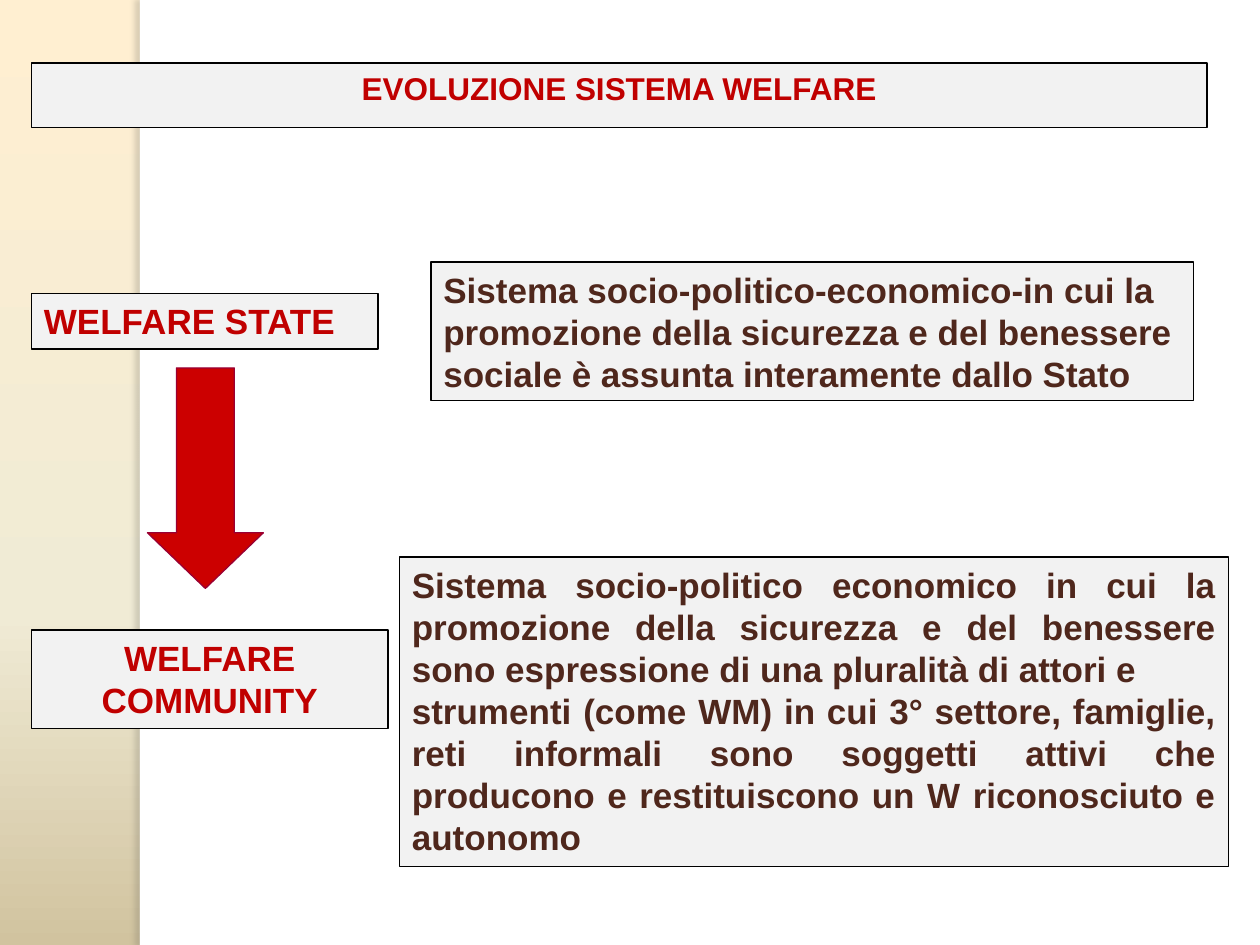
from copy import deepcopy
from dataclasses import dataclass

from lxml.etree import SubElement
from pptx import Presentation
from pptx.dml.color import RGBColor
from pptx.enum.shapes import MSO_SHAPE
from pptx.enum.text import MSO_ANCHOR, MSO_AUTO_SIZE, PP_ALIGN
from pptx.oxml.ns import qn
from pptx.util import Inches, Pt


@dataclass(frozen=True)
class Theme:
    font: str = "Arial"
    title_size: int = 18
    body_size: int = 20
    heading: str = "C00000"
    body: str = "4F271C"
    box: str = "F2F2F2"
    outline: str = "000000"
    arrow: str = "CC0000"
    arrow_outline: str = "990033"
    panel: str = "FFFFFF"
    shade: str = "736F63"
    background: tuple = ((0, "FFEFD1"), (0.65, "F0EBD5"), (1, "D1C39F"))


THEME = Theme()
WIDTH, HEIGHT = 10, 7.5
PANEL_LEFT, EDGE_WIDTH = 1.11, 0.08
LEFT = 0.25

TITLE = "EVOLUZIONE SISTEMA WELFARE"
TITLE_PLACE = (LEFT, 0.5, 9.33, 0.51)
ARROW_PLACE = (1.17, 2.92, 0.92, 1.75)

# place, paragraphs, alignment, colour, wraps
BOXES = [
    ((LEFT, 2.33, 2.75, 0.44), ["WELFARE STATE"],
     PP_ALIGN.LEFT, THEME.heading, True),
    ((LEFT, 5, 2.83, 0.78), ["WELFARE COMMUNITY"],
     PP_ALIGN.CENTER, THEME.heading, True),
    ((3.42, 2.08, 6.05, 1.1),
     ["Sistema socio-politico-economico-in cui la",
      "promozione della sicurezza e del benessere",
      "sociale è assunta interamente dallo Stato"],
     PP_ALIGN.JUSTIFY, THEME.body, False),
    ((3.17, 4.42, 6.58, 2.46),
     ["Sistema socio-politico economico in cui la promozione della sicurezza "
      "e del benessere sono espressione di una pluralità di attori e",
      "strumenti (come WM) in cui 3° settore, famiglie, reti informali sono "
      "soggetti attivi che producono e restituiscono un W riconosciuto e "
      "autonomo"],
     PP_ALIGN.JUSTIFY, THEME.body, True),
]


def rgb(value):
    return RGBColor.from_string(value)


def paint(shape, fill, line=None):
    shape.fill.solid()
    shape.fill.fore_color.rgb = rgb(fill)
    if line:
        shape.line.color.rgb = rgb(line)
        shape.line.width = Pt(0.75)
    else:
        shape.line.fill.background()


def add_shape(slide, kind, place, fill, line=None):
    shape = slide.shapes.add_shape(kind, *map(Inches, place))
    shape.shadow.inherit = False
    paint(shape, fill, line)
    return shape


def write(shape, paragraphs, align, color, size, wraps=True):
    frame = shape.text_frame
    frame.word_wrap = wraps
    frame.auto_size = MSO_AUTO_SIZE.NONE
    frame.vertical_anchor = MSO_ANCHOR.TOP
    for index, text in enumerate(paragraphs):
        para = frame.add_paragraph() if index else frame.paragraphs[0]
        para.alignment = align
        span = para.add_run()
        span.text = text
        span.font.name = THEME.font
        span.font.size = Pt(size)
        span.font.bold = True
        span.font.color.rgb = rgb(color)


def set_background(slide):
    fill = slide.background.fill
    fill.gradient()
    fill.gradient_angle = 270
    stops = slide.element.find(".//" + qn("a:gsLst"))
    stops.append(deepcopy(stops[-1]))
    for stop, (position, color) in zip(fill.gradient_stops, THEME.background):
        stop.position = position
        stop.color.rgb = rgb(color)


def cast_shadow_left(shape):
    effects = shape.element.spPr.find(qn("a:effectLst"))
    shadow = SubElement(effects, qn("a:outerShdw"), blurRad=str(Pt(3)),
                        dist=str(Pt(3)), dir="10800000", rotWithShape="0")
    color = SubElement(shadow, qn("a:srgbClr"), val=THEME.shade)
    SubElement(color, qn("a:alpha"), val="25000")


def add_panel(slide):
    for width in (WIDTH - PANEL_LEFT, EDGE_WIDTH):
        strip = add_shape(slide, MSO_SHAPE.RECTANGLE,
                          (PANEL_LEFT, 0, width, HEIGHT), THEME.panel)
    cast_shadow_left(strip)


def place_title(slide):
    title = slide.shapes.title
    title.left, title.top, title.width, title.height = map(Inches, TITLE_PLACE)
    paint(title, THEME.box, THEME.outline)
    write(title, [TITLE], PP_ALIGN.CENTER, THEME.heading, THEME.title_size)
    title.element.getparent().append(title.element)  # in front of the panel


def main():
    deck = Presentation()
    deck.slide_width, deck.slide_height = Inches(WIDTH), Inches(HEIGHT)
    slide = deck.slides.add_slide(deck.slide_layouts[5])
    set_background(slide)
    add_panel(slide)
    place_title(slide)

    arrow = add_shape(slide, MSO_SHAPE.DOWN_ARROW, ARROW_PLACE,
                      THEME.arrow, THEME.arrow_outline)
    arrow.adjustments[0] = 0.5
    arrow.adjustments[1] = 0.48

    for place, paragraphs, align, color, wraps in BOXES:
        box = add_shape(slide, MSO_SHAPE.RECTANGLE, place,
                        THEME.box, THEME.outline)
        write(box, paragraphs, align, color, THEME.body_size, wraps)

    deck.save("out.pptx")


if __name__ == "__main__":
    main()
